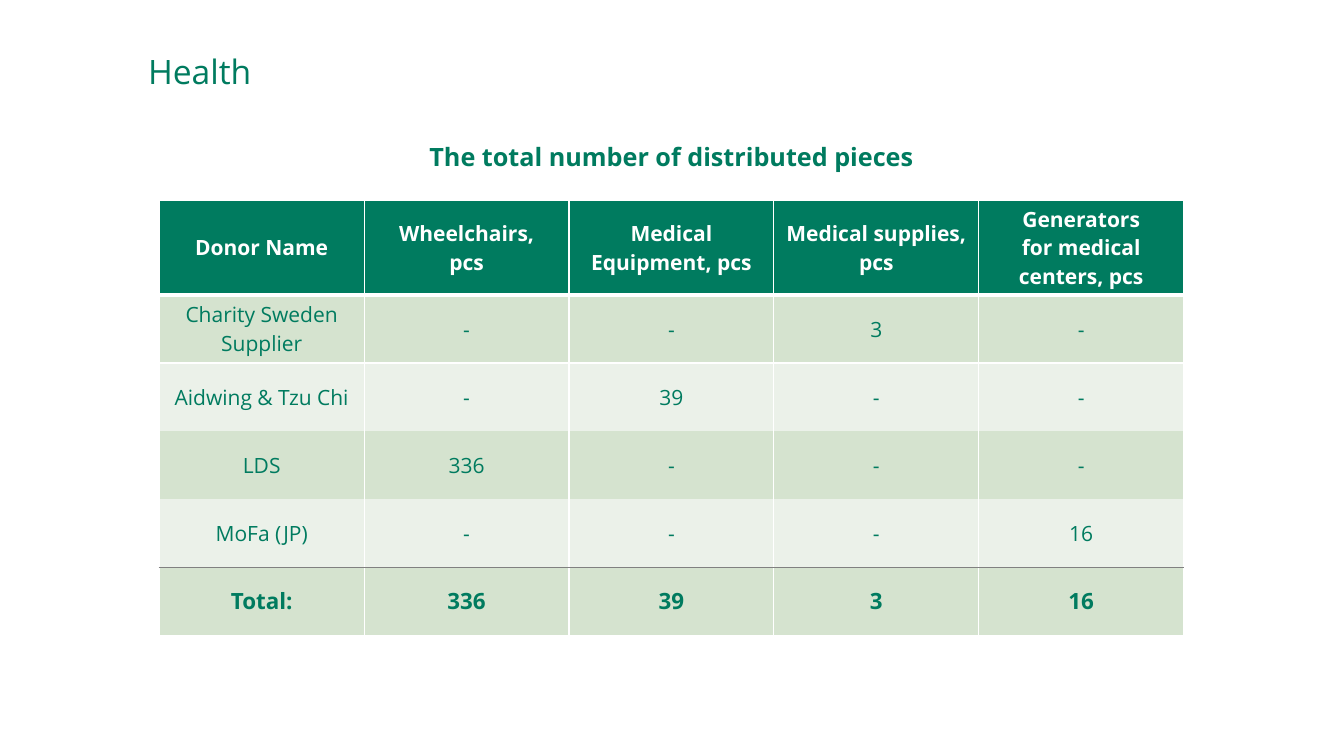
import dataclasses

import lxml.etree
import pptx
import pptx.dml.color
import pptx.enum.text
import pptx.oxml.ns
import pptx.util


@dataclasses.dataclass(frozen=True)
class Theme:
    font: str = "Open Sans"
    green: str = "007B5F"
    white: str = "FFFFFF"
    gray: str = "808080"
    dark_band: str = "D5E3CF"
    light_band: str = "EBF1E9"
    title_size: int = 24
    caption_size: int = 18
    body_size: int = 15
    total_size: int = 16


THEME = Theme()
WIDTH, HEIGHT = 13.33, 7.5
CENTER = pptx.enum.text.PP_ALIGN.CENTER
MIDDLE = pptx.enum.text.MSO_ANCHOR.MIDDLE

ROWS = [
    ["Donor Name", "Wheelchairs,\npcs", "Medical Equipment, pcs",
     "Medical supplies, pcs", "Generators\nfor medical centers, pcs"],
    ["Charity Sweden\nSupplier", "-", "-", "3", "-"],
    ["Aidwing & Tzu Chi", "-", "39", "-", "-"],
    ["LDS", "336", "-", "-", "-"],
    ["MoFa (JP)", "-", "-", "-", "16"],
    ["Total:", "336", "39", "3", "16"],
]
HEADER_SHARE = 0.205  # of the table's height

# Horizontal rules from the table's top to its bottom: colour and points
RULES = [
    (THEME.white, 1), (THEME.white, 3), (THEME.white, 1), None,
    None, (THEME.gray, 1), (THEME.white, 1),
]


def inches(box):
    return [pptx.util.Inches(length) for length in box]


def rgb(value):
    return pptx.dml.color.RGBColor.from_string(value)


def style_text(text_frame, text, size, color, bold=False, align=None):
    text_frame.text = text
    for paragraph in text_frame.paragraphs:
        paragraph.alignment = align
        paragraph.font.name = THEME.font
        paragraph.font.size = pptx.util.Pt(size)
        paragraph.font.bold = bold
        paragraph.font.color.rgb = rgb(color)


def add_border(cell, side, rule):
    qn = pptx.oxml.ns.qn
    properties = cell._tc.get_or_add_tcPr()
    line = lxml.etree.SubElement(properties, qn(f"a:ln{side}"))
    if rule is None:
        lxml.etree.SubElement(line, qn("a:noFill"))
        return
    color, points = rule
    line.set("w", str(pptx.util.Pt(points)))
    fill = lxml.etree.SubElement(line, qn("a:solidFill"))
    lxml.etree.SubElement(fill, qn("a:srgbClr")).set("val", color)


def add_heading(slide, box):
    text_frame = slide.shapes.add_textbox(*inches(box)).text_frame
    text_frame.word_wrap = True
    text_frame.vertical_anchor = MIDDLE
    style_text(text_frame, "Health", THEME.title_size, THEME.green)
    text_frame.paragraphs[0].line_spacing = 0.9


def add_caption(slide, box):
    text_frame = slide.shapes.add_textbox(*inches(box)).text_frame
    text_frame.word_wrap = False
    style_text(text_frame, "The total number of distributed pieces",
               THEME.caption_size, THEME.green, True, CENTER)


def add_donor_table(slide, box):
    frame = slide.shapes.add_table(len(ROWS), len(ROWS[0]), *inches(box))
    table = frame.table
    table.first_row = table.horz_banding = False

    # The header takes its share; the other rows divide the rest equally
    header_height = box[3] * HEADER_SHARE
    row_height = (box[3] - header_height) / (len(ROWS) - 1)
    total = len(ROWS) - 1
    for index, texts in enumerate(ROWS):
        is_header, is_total = index == 0, index == total
        table.rows[index].height = pptx.util.Inches(
            header_height if is_header else row_height)
        band = THEME.dark_band if index % 2 else THEME.light_band
        for column, text in enumerate(texts):
            cell = table.cell(index, column)
            cell.vertical_anchor = MIDDLE
            cell.margin_left = cell.margin_right = pptx.util.Inches(0.08)
            cell.margin_top = cell.margin_bottom = pptx.util.Inches(0.04)
            for side in "LR":
                add_border(cell, side, (THEME.white, 1))
            add_border(cell, "T", RULES[index])
            add_border(cell, "B", RULES[index + 1])
            cell.fill.solid()
            cell.fill.fore_color.rgb = rgb(THEME.green if is_header else band)
            style_text(cell.text_frame, text,
                       THEME.total_size if is_total else THEME.body_size,
                       THEME.white if is_header else THEME.green,
                       is_header or is_total, CENTER)


def main():
    presentation = pptx.Presentation()
    presentation.slide_width = pptx.util.Inches(WIDTH)
    presentation.slide_height = pptx.util.Inches(HEIGHT)
    slide = presentation.slides.add_slide(presentation.slide_layouts[6])

    # Table and caption share the same centre line
    table_width, caption_width = 10.16, 5.05
    table_left = 1.58
    caption_left = table_left + (table_width - caption_width) / 2
    add_donor_table(slide, (table_left, 1.99, table_width, 4.25))
    add_caption(slide, (caption_left, 1.35, caption_width, 0.4))
    add_heading(slide, (1.37, 0.33, 5.3, 0.79))

    presentation.save("out.pptx")


if __name__ == "__main__":
    main()
